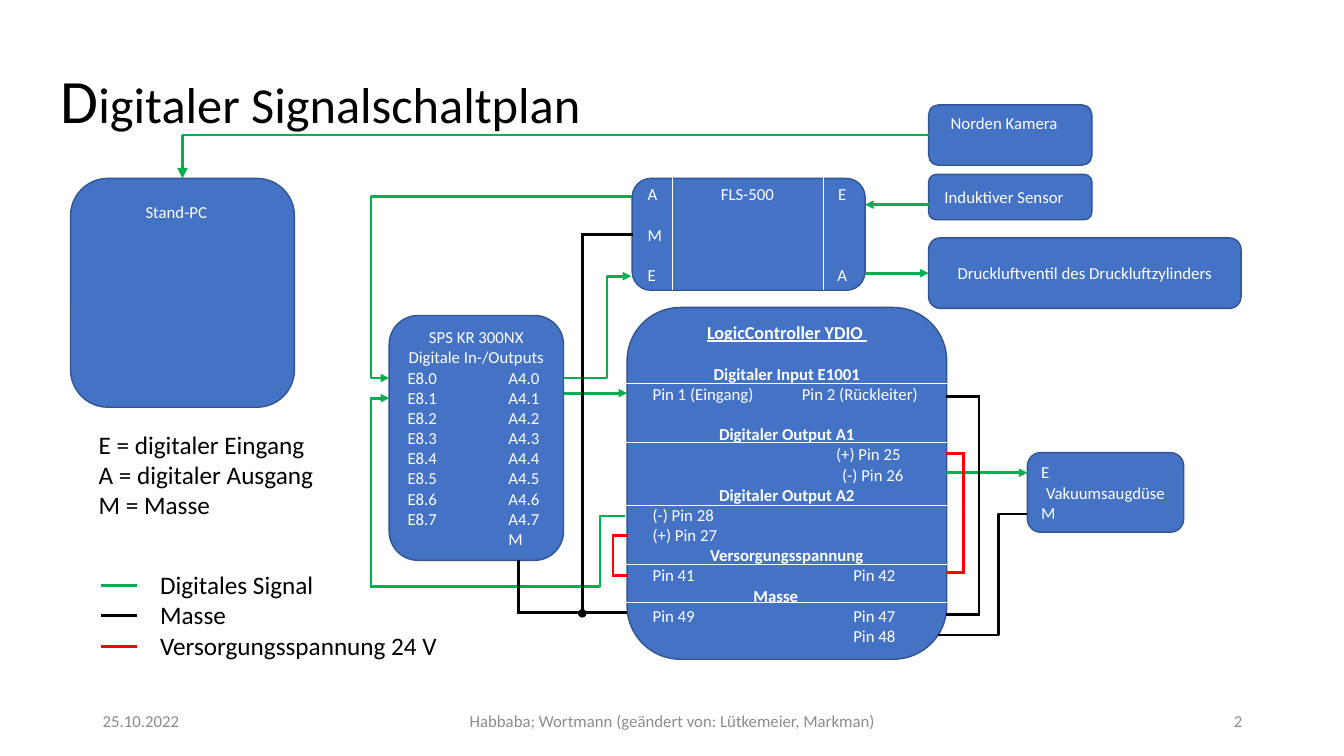
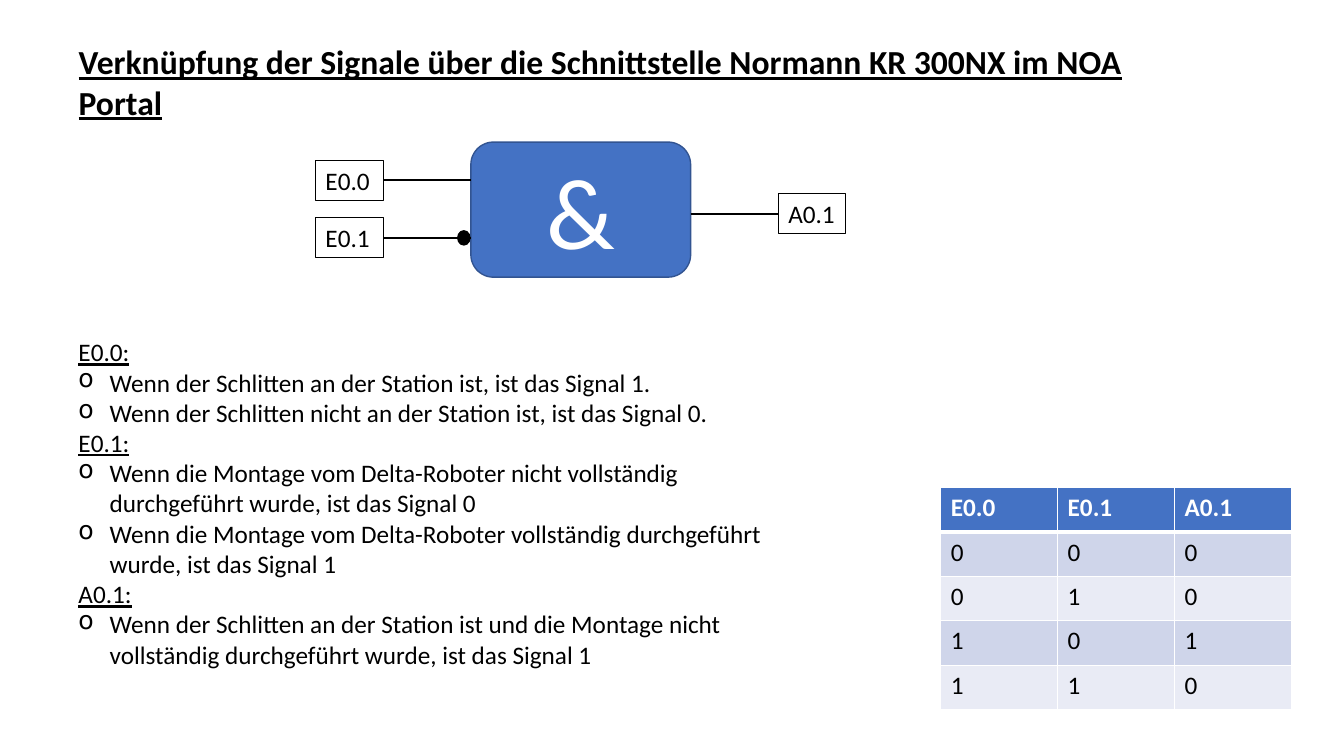
import pptx
import pptx.util
import pptx.dml.color
import pptx.enum.shapes
import pptx.enum.text
import pptx.oxml.ns
import lxml.etree

Inches, Pt = pptx.util.Inches, pptx.util.Pt
qn = pptx.oxml.ns.qn
SHAPE = pptx.enum.shapes.MSO_SHAPE
LINE = pptx.enum.shapes.MSO_CONNECTOR
ALIGN = pptx.enum.text.PP_ALIGN
ANCHOR = pptx.enum.text.MSO_ANCHOR

BLUE, EDGE, WHITE, BLACK = "4472C4", "325491", "FFFFFF", "000000"
GREEN, RED, GREY = "00B050", "FF0000", "8C8C8C"
BANDS = ["CFD5EA", "E9EBF5"]
TOP, LEFT, RIGHT = 0, 1, 3  # connection sites
GAP = Pt(14.6)  # one line of 12 pt text


def rgb(value):
    return pptx.dml.color.RGBColor.from_string(value)


def sub(parent, tag, **attrs):
    return lxml.etree.SubElement(parent, qn(tag), **attrs)


class Deck:
    """Holds the style and the current slide."""

    def __init__(self):
        self.prs = pptx.Presentation()
        self.prs.slide_width, self.prs.slide_height = Inches(13.33), Inches(7.5)
        self.slide = None

    def paragraph(self, p, runs, tab=None, bullet=None, **para):
        """Fill a paragraph with (text, font values) runs."""
        for key, value in para.items():
            setattr(p, key, value)
        pPr = p._p.get_or_add_pPr()
        if bullet:
            pPr.set("marL", str(Inches(0.31)))
            pPr.set("indent", str(-Inches(0.31)))
            sub(pPr, "a:buChar", char=bullet)
        if tab:
            tabs = sub(pPr, "a:tabLst")
            for kind, pos in tab:
                sub(tabs, "a:tab", pos=str(Inches(pos)), algn=kind)
        for text, font in runs:
            r = p.add_run()
            r.text = text
            values = {"name": "Calibri", **font}
            r.font.color.rgb = rgb(values.pop("color", BLACK))
            for key, value in values.items():
                setattr(r.font, key, value)

    def paragraphs(self, tf, lines, size, color=BLACK, **para):
        """Add lines; each is a text or a (text, overrides) pair."""
        for i, line in enumerate(lines):
            text, over = (line, {}) if isinstance(line, str) else line
            values = {**para, **over}
            font = {"size": Pt(size), "color": color}
            for key in ("size", "bold", "underline"):
                if key in values:
                    font[key] = values.pop(key)
            p = tf.paragraphs[0] if i == 0 else tf.add_paragraph()
            self.paragraph(p, [(text, font)], **values)

    def titled_slide(self, runs, at, anchor, spacing):
        self.slide = self.prs.slides.add_slide(self.prs.slide_layouts[5])
        title = self.slide.shapes.title
        title.left, title.top, title.width, title.height = map(Inches, at)
        tf = title.text_frame
        tf.auto_size = pptx.enum.text.MSO_AUTO_SIZE.NONE
        tf.vertical_anchor = anchor
        self.paragraph(tf.paragraphs[0], runs, alignment=ALIGN.LEFT, line_spacing=spacing)

    def text(self, at, lines, size, anchor=ANCHOR.TOP, **style):
        tf = self.slide.shapes.add_textbox(*map(Inches, at)).text_frame
        tf.word_wrap, tf.vertical_anchor = True, anchor
        self.paragraphs(tf, lines, size, **style)

    def box(self, at, lines=(), kind=SHAPE.ROUNDED_RECTANGLE, fill=BLUE, edge=EDGE,
            width=1, size=12, color=WHITE, align=ALIGN.CENTER, frame=None):
        sp = self.slide.shapes.add_shape(kind, *map(Inches, at))
        sp.shadow.inherit = False
        if fill:
            sp.fill.solid()
            sp.fill.fore_color.rgb = rgb(fill)
        else:
            sp.fill.background()
        sp.line.color.rgb, sp.line.width = rgb(edge), Pt(width)
        for key, value in {"vertical_anchor": ANCHOR.MIDDLE, **(frame or {})}.items():
            setattr(sp.text_frame, key, value)
        self.paragraphs(sp.text_frame, lines, size, color, alignment=align)
        return sp

    def line(self, start, end, color=BLACK, width=2, arrow=False, kind=LINE.STRAIGHT,
             begin=None, finish=None, cap="flat"):
        c = self.slide.shapes.add_connector(kind, *map(Inches, (*start, *end)))
        if begin:
            c.begin_connect(*begin)
        if finish:
            c.end_connect(*finish)
        c.line.color.rgb, c.line.width = rgb(color), Pt(width)
        spPr = c.element.spPr
        ln = spPr.find(qn("a:ln"))
        ln.set("cap", cap)
        if arrow:
            sub(ln, "a:tailEnd", type="triangle")
        sub(spPr, "a:effectLst")
        return c

    def elbow(self, start, mid, end, color, arrow=False):
        """Horizontal, vertical at x = mid, horizontal."""
        c = self.line(start, end, color, arrow=arrow, kind=LINE.ELBOW)
        share = round((mid - start[0]) / (end[0] - start[0]) * 100000)
        guides = c.element.spPr.find(qn("a:prstGeom")).find(qn("a:avLst"))
        sub(guides, "a:gd", name="adj1", fmla=f"val {share}")

    def wire(self, points, color, arrow=False):
        """Straight pieces through the points."""
        last = len(points) - 2
        for i, (a, b) in enumerate(zip(points, points[1:])):
            head = arrow and i == last
            self.line(a, b, color, arrow=head, cap="flat" if head else "sq")

    def table(self, at, rows, col_width, row_height):
        size = (col_width * len(rows[0]), row_height * len(rows))
        tbl = self.slide.shapes.add_table(
            len(rows), len(rows[0]), *map(Inches, (*at, *size))).table
        for i, row in enumerate(rows):
            for j, value in enumerate(row):
                cell = tbl.cell(i, j)
                tcPr = cell._tc.get_or_add_tcPr()
                for side in "LRTB":
                    thick = (i, side) in ((0, "B"), (1, "T"))
                    ln = sub(tcPr, f"a:ln{side}", w=str(Pt(3 if thick else 1)))
                    sub(sub(ln, "a:solidFill"), "a:srgbClr", val=WHITE)
                cell.fill.solid()
                cell.fill.fore_color.rgb = rgb(BANDS[(i - 1) % 2] if i else BLUE)
                self.paragraphs(cell.text_frame, [value], 18, BLACK if i else WHITE,
                                bold=i == 0)

    def footer(self, date, authors, number):
        parts = [(0.92, 3, date, ALIGN.LEFT), (4.42, 4.5, authors, ALIGN.CENTER),
                 (9.42, 3, number, ALIGN.RIGHT)]
        for x, width, text, align in parts:
            self.text((x, 6.95, width, 0.4), [text], 12, ANCHOR.MIDDLE,
                      color=GREY, alignment=align)


def signal_plan(d):
    d.titled_slide([("D", {"size": Pt(44)}), ("igitaler Signalschaltplan", {"size": Pt(36)})],
                   (0.5, 0.3, 11.5, 1.45), ANCHOR.MIDDLE, 0.9)
    d.footer("25.10.2022", "Habbaba; Wortmann (geändert von: Lütkemeier, Markman)", "2")

    # Devices
    shifted = {"margin_right": Inches(0.22)}
    pc = d.box((0.7, 1.77, 2.22, 2.27), ["Stand-PC"],
               frame={**shifted, "vertical_anchor": ANCHOR.TOP, "margin_top": Inches(0.12)})
    camera = d.box((9.21, 1.04, 1.62, 0.6), ["Norden Kamera"],
                   frame={**shifted, "vertical_anchor": ANCHOR.TOP})
    d.box((9.21, 1.73, 1.62, 0.45), ["Induktiver Sensor"], frame=shifted)
    valve = d.box((9.21, 2.36, 3.1, 0.7), ["Druckluftventil des Druckluftzylinders"])
    d.box((10.19, 4.49, 1.55, 0.79),
          ["E", ("Vakuumsaugdüse", {"alignment": ALIGN.CENTER}), "M"], align=ALIGN.LEFT)

    # Station with its three columns
    thirds = {"tab": [("ctr", 0.99), ("ctr", 1.93)]}
    d.box((6.27, 1.77, 2.31, 1.11),
          [("A\tFLS-500\tE", thirds), ("M", {"space_before": GAP}),
           ("E\t\tA", {**thirds, "space_before": GAP})], align=ALIGN.LEFT)
    for x in (6.67, 8.17):
        d.line((x, 1.77), (x, 2.88), WHITE, 0.5)

    # Programmable controller
    second = {"tab": [("l", 1)]}
    centred = {"alignment": ALIGN.CENTER}
    d.box((3.86, 3.13, 1.73, 2.43),
          [("SPS KR 300NX", centred), ("Digitale In-/Outputs", centred)]
          + [(f"E8.{i}\tA4.{i}", second) for i in range(8)] + [("\tM", second)],
          align=ALIGN.LEFT)

    # Robot controller with ruled sections
    head = {"alignment": ALIGN.CENTER, "bold": True}
    spaced = {**head, "space_before": GAP}

    def at(x):
        return {"tab": [("l", x)]}

    d.box((6.22, 3.05, 3.17, 3.49), [
        ("LogicController YDIO ", {**head, "size": Pt(13), "underline": True}),
        ("Digitaler Input E1001", spaced),
        ("Pin 1 (Eingang)\tPin 2 (Rückleiter)", at(1.48)),
        ("Digitaler Output A1", spaced),
        ("\t(+) Pin 25", at(1.82)),
        ("\t(-) Pin 26", at(1.88)),
        ("Digitaler Output A2", head),
        "(-) Pin 28",
        "(+) Pin 27",
        ("Versorgungsspannung", head),
        ("Pin 41\tPin 42", at(1.99)),
        ("\tMasse", {"bold": True, **at(1)}),
        ("Pin 49\tPin 47", at(1.99)),
        ("\tPin 48", at(1.99)),
    ], align=ALIGN.LEFT)
    for y in (3.8, 4.39, 5.01, 5.6, 5.98):
        d.line((6.21, y), (9.39, y), WHITE, 0.5)

    # Digital signals
    d.line((9.21, 1.34), (1.81, 1.34), GREEN, begin=(camera, LEFT))
    d.line((1.81, 1.34), (1.81, 1.77), GREEN, 2.5, True, finish=(pc, TOP))
    d.line((9.21, 2.03), (8.58, 2.03), GREEN, arrow=True)
    d.line((8.58, 2.71), (9.21, 2.71), GREEN, arrow=True, finish=(valve, LEFT))
    d.line((5.59, 3.9), (6.22, 3.9), GREEN, arrow=True)
    d.line((9.38, 4.69), (10.19, 4.69), GREEN, arrow=True)
    d.elbow((6.27, 1.95), 3.68, (3.86, 3.75), GREEN, True)
    d.elbow((5.59, 3.75), 6.02, (6.26, 2.74), GREEN, True)
    d.elbow((6.2, 5.12), 5.95, (3.68, 5.82), GREEN)
    d.wire([(3.68, 5.82), (3.68, 3.95), (3.86, 3.95)], GREEN, True)

    # Supply
    d.wire([(9.4, 4.5), (9.56, 4.5), (9.56, 5.68), (9.4, 5.68)], RED)
    d.wire([(6.21, 5.31), (6.08, 5.31), (6.08, 5.71), (6.21, 5.71)], RED)

    # Ground
    d.wire([(5.14, 5.57), (5.14, 6.08), (6.2, 6.08)], BLACK)
    d.wire([(5.78, 6.05), (5.78, 2.33), (6.26, 2.33)], BLACK)
    d.wire([(9.4, 3.93), (9.71, 3.93), (9.71, 6.1), (9.4, 6.1)], BLACK)
    d.elbow((9.3, 6.3), 9.9, (10.19, 5.1), BLACK)
    d.box((5.74, 6.05, 0.07, 0.07), kind=SHAPE.FLOWCHART_CONNECTOR, fill=BLACK, edge=BLACK)

    # Legends
    d.text((0.88, 4.21, 2.59, 1.01),
           ["E = digitaler Eingang", "A = digitaler Ausgang", "M = Masse"], 18)
    d.text((1.49, 5.6, 3, 1.01),
           ["Digitales Signal", "Masse", "Versorgungsspannung 24 V"], 18)
    for i, color in enumerate((GREEN, BLACK, RED)):
        y = 5.81 + 0.3 * i
        d.line((1, y), (1.36, y), color)


def signal_logic(d):
    d.titled_slide([("Verknüpfung der Signale über die Schnittstelle Normann KR 300NX im NOA Portal",
                     {"size": Pt(24), "bold": True, "underline": True})],
                   (0.68, 0.36, 11.32, 0.5), ANCHOR.TOP, 1)

    # Gate with inputs and output
    d.box((4.67, 1.41, 2.18, 1.34), ["&"], size=72)

    def port(x, y, name):
        return d.box((x, y, 0.67, 0.4), [name], SHAPE.RECTANGLE, None, BLACK, 0.75, 18,
                     BLACK, ALIGN.LEFT, {"word_wrap": False})

    for y, name in ((1.59, "E0.0"), (2.16, "E0.1")):
        d.line((3.8, y + 0.2), (4.67, y + 0.2), width=1.5, begin=(port(3.13, y, name), RIGHT))
    d.line((6.85, 2.12), (7.72, 2.12), width=1.5, finish=(port(7.72, 1.92, "A0.1"), LEFT))
    d.box((4.54, 2.29, 0.12, 0.14), kind=SHAPE.FLOWCHART_CONNECTOR, fill=BLACK, edge=BLACK)

    # Truth table
    d.table((9.33, 4.84), [["E0.0", "E0.1", "A0.1"], *map(list, ("000", "010", "101", "110"))],
            1.16, 0.44)

    # Meaning of the signals
    meanings = {
        "E0.0:": ["Wenn der Schlitten an der Station ist, ist das Signal 1.",
                  "Wenn der Schlitten nicht an der Station ist, ist das Signal 0."],
        "E0.1:": ["Wenn die Montage vom Delta-Roboter nicht vollständig durchgeführt wurde, "
                  "ist das Signal 0",
                  "Wenn die Montage vom Delta-Roboter vollständig durchgeführt wurde, "
                  "ist das Signal 1"],
        "A0.1:": ["Wenn der Schlitten an der Station ist und die Montage nicht vollständig "
                  "durchgeführt wurde, ist das Signal 1"],
    }
    lines = []
    for name, rules in meanings.items():
        lines.append((name, {"underline": True}))
        lines += [(rule, {"bullet": "o"}) for rule in rules]
    d.text((0.68, 3.29, 7.11, 3.5), lines, 18)


def main():
    d = Deck()
    signal_plan(d)
    signal_logic(d)
    d.prs.save("out.pptx")


if __name__ == "__main__":
    main()
